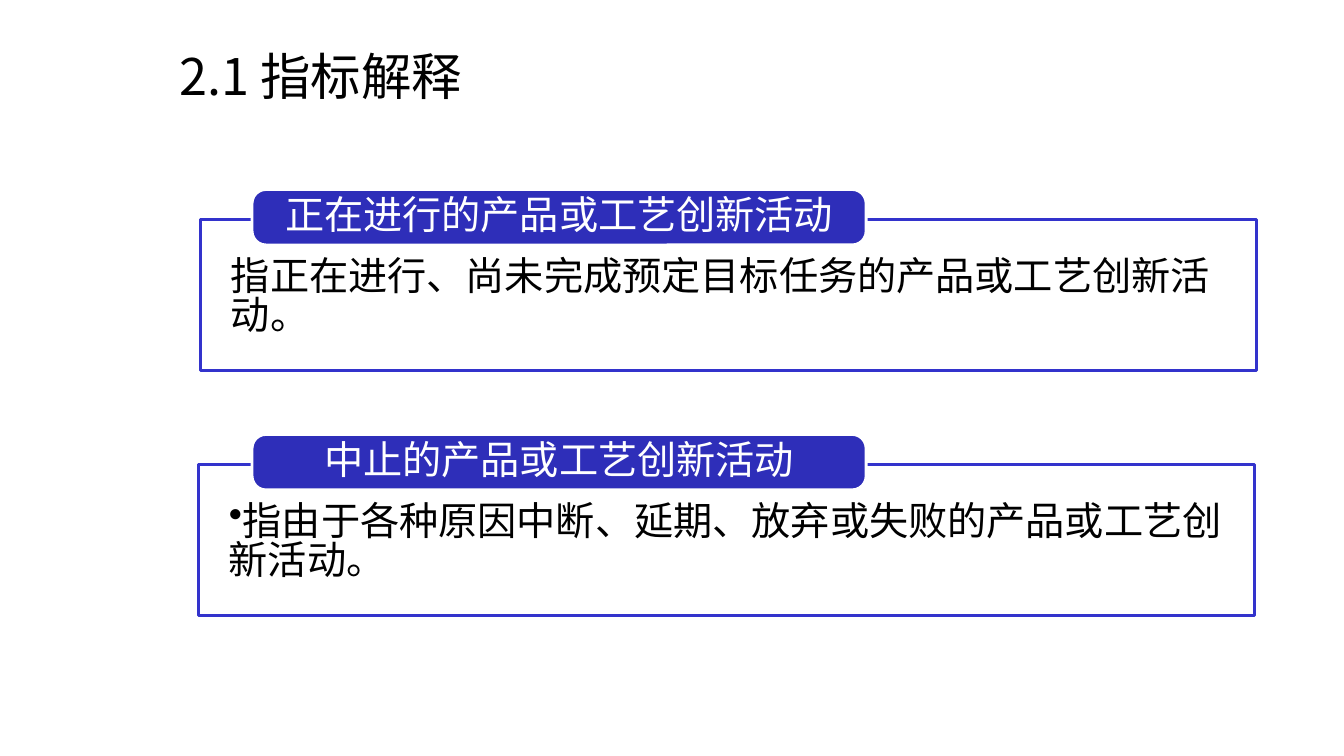
"""Build the slide that explains two innovation activity indicators."""
from lxml.etree import SubElement
from pptx import Presentation
from pptx.dml.color import RGBColor
from pptx.enum.shapes import MSO_SHAPE
from pptx.enum.text import MSO_ANCHOR, PP_ALIGN
from pptx.oxml.ns import qn
from pptx.util import Inches, Pt

BLACK = RGBColor(0x00, 0x00, 0x00)
WHITE = RGBColor(0xFF, 0xFF, 0xFF)
FRAME_BLUE = RGBColor(0x33, 0x33, 0xCC)
LABEL_BLUE = RGBColor(0x2E, 0x2E, 0xB9)
CJK_FONT = "Noto Sans CJK SC"
LATIN_FONT = "Times New Roman"


def write(box, text, size, color, margins, anchor, font=CJK_FONT):
    frame = box.text_frame
    frame.word_wrap = True
    frame.vertical_anchor = anchor
    frame.margin_left = frame.margin_right = Inches(margins[0])
    frame.margin_top, frame.margin_bottom = Inches(margins[1]), Inches(margins[2])
    para = frame.paragraphs[0]
    para.alignment = PP_ALIGN.LEFT
    span = para.add_run()
    span.text = text
    span.font.name = font
    span.font.size = Pt(size)
    span.font.color.rgb = color
    SubElement(span.font._element, qn("a:ea")).set("typeface", CJK_FONT)
    return para


def add_panel(kind, left, top, width, height, fill, line):
    panel = page.shapes.add_shape(
        kind, Inches(left), Inches(top), Inches(width), Inches(height))
    panel.shadow.inherit = False
    panel.fill.solid()
    panel.fill.fore_color.rgb = fill
    panel.line.color.rgb = line
    panel.line.width = Pt(2)
    return panel


deck = Presentation()
deck.slide_width, deck.slide_height = Inches(13.33), Inches(7.5)
page = deck.slides.add_slide(deck.slide_layouts[6])

title = page.shapes.add_textbox(Inches(1.68), Inches(0.27), Inches(10.78), Inches(0.96))
write(title, "2.1 指标解释", 36, BLACK, (0.1, 0.05, 0.05), MSO_ANCHOR.MIDDLE)

indicators = [
    (1.99, 2.18, "正在进行的产品或工艺创新活动", LATIN_FONT, False,
     "指正在进行、尚未完成预定目标任务的产品或工艺创新活动。"),
    (1.97, 4.61, "中止的产品或工艺创新活动", CJK_FONT, True,
     "指由于各种原因中断、延期、放弃或失败的产品或工艺创新活动。"),
]
for left, top, heading, font, bulleted, meaning in indicators:
    frame_box = add_panel(MSO_SHAPE.RECTANGLE, left, top, 10.47, 1.5, WHITE, FRAME_BLUE)
    color_choice = frame_box.fill._xPr.find(qn("a:solidFill"))[0]
    SubElement(color_choice, qn("a:alpha")).set("val", "90000")
    para = write(frame_box, meaning, 28, BLACK, (0.3, 0.39, 0.13), MSO_ANCHOR.TOP, font)
    para.line_spacing = 0.83
    if bulleted:
        SubElement(para._p.get_or_add_pPr(), qn("a:buChar")).set("char", "•")

    label = add_panel(MSO_SHAPE.ROUNDED_RECTANGLE, 2.5, top - 0.3, 6.09, 0.55,
                      LABEL_BLUE, WHITE)
    label.adjustments[0] = 0.25
    para = write(label, heading, 28, WHITE, (0.13, 0.03, 0.03), MSO_ANCHOR.MIDDLE)
    para.alignment = PP_ALIGN.CENTER
    para.line_spacing = 0.9

deck.save("out.pptx")
